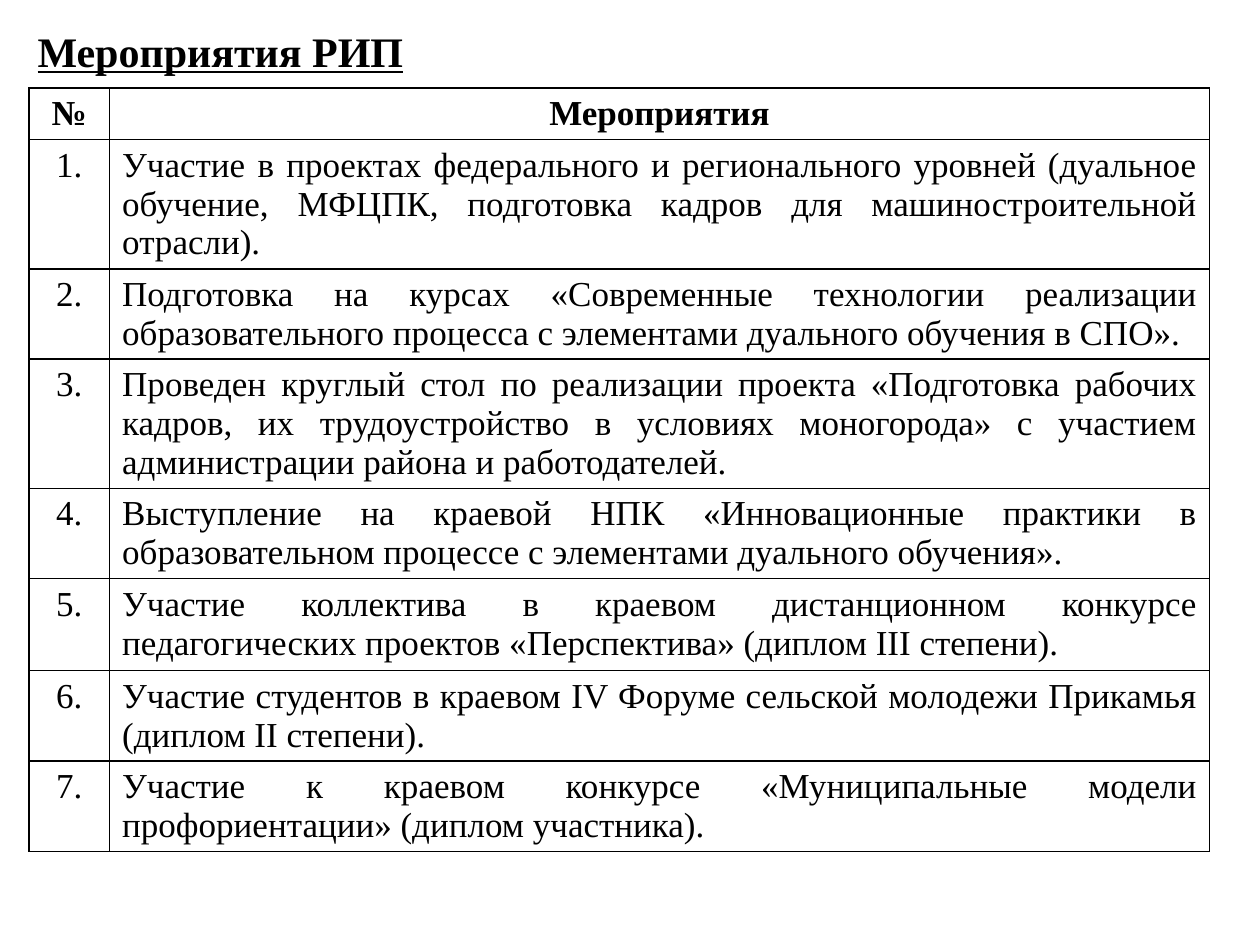
from lxml import etree
from pptx import Presentation
from pptx.dml.color import RGBColor
from pptx.enum.text import MSO_ANCHOR, PP_ALIGN
from pptx.oxml.ns import qn
from pptx.util import Inches, Pt

LEFT, CENTER, JUSTIFY = PP_ALIGN.LEFT, PP_ALIGN.CENTER, PP_ALIGN.JUSTIFY
TOP, MIDDLE = MSO_ANCHOR.TOP, MSO_ANCHOR.MIDDLE
FONT = "Times New Roman"
COLORS = {"text": "000000", "border": "000000", "cell": "FFFFFF"}
COLUMN_WIDTHS = [0.64, 8.73]
ROW_HEIGHTS = [0.33, 0.68, 0.68, 0.95, 0.71, 0.73, 0.67, 0.61]
TABLE_HEIGHT = 6.47
HEADERS = ["№", "Мероприятия"]
EVENTS = [
    "Участие в проектах федерального и регионального уровней (дуальное обучение, "
    "МФЦПК, подготовка кадров для машиностроительной отрасли).",
    "Подготовка на курсах «Современные технологии реализации образовательного "
    "процесса с элементами дуального обучения в СПО».",
    "Проведен круглый стол по реализации проекта «Подготовка рабочих кадров, их "
    "трудоустройство в условиях моногорода» с участием администрации района и "
    "работодателей.",
    "Выступление на краевой НПК «Инновационные практики в образовательном процессе "
    "с элементами дуального обучения».",
    "Участие коллектива в краевом дистанционном конкурсе педагогических проектов "
    "«Перспектива» (диплом III степени).",
    "Участие студентов в краевом IV Форуме сельской молодежи Прикамья "
    "(диплом II степени).",
    "Участие к краевом конкурсе «Муниципальные модели профориентации» "
    "(диплом участника).",
]


def write_text(frame, text, size=20, bold=False, underline=False, align=LEFT, anchor=TOP):
    frame.word_wrap = True
    frame.vertical_anchor = anchor
    para = frame.paragraphs[0]
    para.alignment = align
    span = para.add_run()
    span.text = text
    span.font.name = FONT
    span.font.size = Pt(size)
    span.font.bold = bold
    span.font.underline = underline
    span.font.color.rgb = RGBColor.from_string(COLORS["text"])


def add_title(page, text):
    box = page.shapes.add_textbox(Inches(0.2), Inches(0.13), Inches(9), Inches(0.54))
    write_text(box.text_frame, text, size=24, bold=True, underline=True, anchor=MIDDLE)


def add_borders(cell):
    properties = cell._tc.get_or_add_tcPr()
    for position, side in enumerate(("a:lnL", "a:lnR", "a:lnT", "a:lnB")):
        line = etree.Element(qn(side), w=str(Pt(1)))
        fill = etree.SubElement(line, qn("a:solidFill"))
        etree.SubElement(fill, qn("a:srgbClr"), val=COLORS["border"])
        properties.insert(position, line)


def add_events_table(page, rows):
    frame = page.shapes.add_table(
        len(rows), len(COLUMN_WIDTHS), Inches(0.23), Inches(0.7),
        Inches(sum(COLUMN_WIDTHS)), Inches(TABLE_HEIGHT))
    table = frame.table
    table.first_row = False
    table.horz_banding = False
    for column, width in zip(table.columns, COLUMN_WIDTHS):
        column.width = Inches(width)
    for row, height in zip(table.rows, ROW_HEIGHTS):
        row.height = Inches(height)
    frame.height = Inches(TABLE_HEIGHT)
    for row_index, texts in enumerate(rows):
        header = row_index == 0
        for column_index, text in enumerate(texts):
            cell = table.cell(row_index, column_index)
            cell.fill.solid()
            cell.fill.fore_color.rgb = RGBColor.from_string(COLORS["cell"])
            align = CENTER if header or column_index == 0 else JUSTIFY
            write_text(cell.text_frame, text, bold=header, align=align)
            add_borders(cell)


def main():
    deck = Presentation()
    deck.slide_width, deck.slide_height = Inches(10), Inches(7.5)
    page = deck.slides.add_slide(deck.slide_layouts[6])
    numbered_events = [[f"{number}.", event] for number, event in enumerate(EVENTS, 1)]
    add_events_table(page, [HEADERS] + numbered_events)
    add_title(page, "Мероприятия РИП")
    deck.save("out.pptx")


if __name__ == "__main__":
    main()
